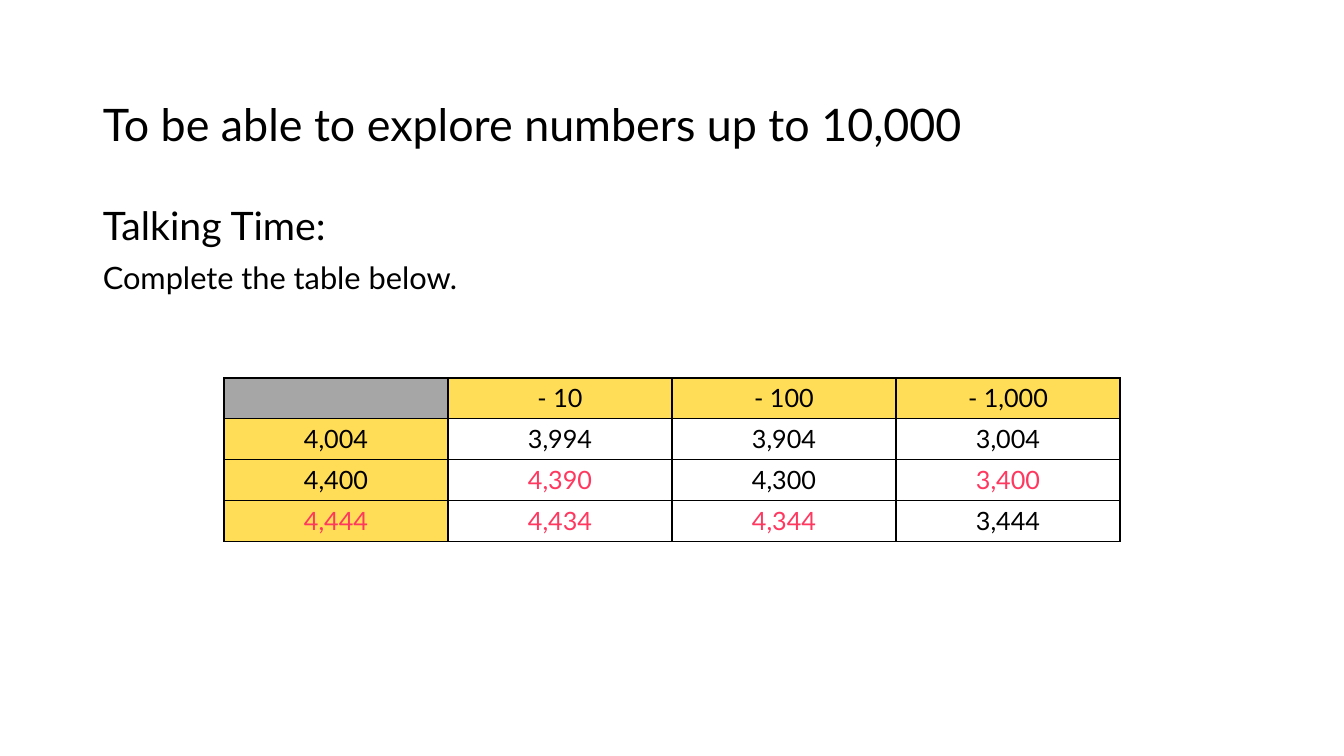
from dataclasses import dataclass

from lxml import etree
from pptx import Presentation
from pptx.dml.color import RGBColor
from pptx.enum.text import MSO_ANCHOR, MSO_AUTO_SIZE, PP_ALIGN
from pptx.oxml.ns import qn
from pptx.util import Inches, Pt

LEFT, CENTER = PP_ALIGN.LEFT, PP_ALIGN.CENTER
TOP, MIDDLE = MSO_ANCHOR.TOP, MSO_ANCHOR.MIDDLE
NO_FIT = MSO_AUTO_SIZE.NONE
WIDE, HIGH = Inches(13.33), Inches(7.5)


@dataclass(frozen=True)
class Theme:
    """Hold the font, type sizes and colours of the slide."""
    font: str = "Lato"
    title: int = 32
    head: int = 28
    body: int = 22
    cell: int = 18
    ink: str = "000000"
    answer: str = "FF3860"
    label: str = "FFDD57"
    blank: str = "A6A6A6"
    paper: str = "FFFFFF"


THEME = Theme()
ROWS = [
    ["", "- 10", "- 100", "- 1,000"],
    ["4,004", "3,994", "3,904", "3,004"],
    ["4,400", "4,390", "4,300", "3,400"],
    ["4,444", "4,434", "4,344", "3,444"],
]
ANSWERS = {"4,390", "3,400", "4,444", "4,434", "4,344"}


def style(para, size, color=THEME.ink, align=LEFT):
    """Set the alignment and font of a paragraph."""
    para.alignment = align
    para.font.name = THEME.font
    para.font.size = Pt(size)
    para.font.color.rgb = RGBColor.from_string(color)


def place(shape, left, top, width, height):
    """Place a shape by shares of the slide's size."""
    shape.left, shape.width = int(WIDE * left), int(WIDE * width)
    shape.top, shape.height = int(HIGH * top), int(HIGH * height)


def write(holder, lines, anchor):
    """Fill a placeholder with plain lines of given sizes."""
    frame = holder.text_frame
    frame.text = "\n".join(text for text, size in lines)
    frame.auto_size = NO_FIT
    frame.vertical_anchor = anchor
    for i, (para, (text, size)) in enumerate(zip(frame.paragraphs, lines)):
        props = para._p.get_or_add_pPr()
        props.set("marL", "0")
        props.set("indent", "0")
        etree.SubElement(props, qn("a:buNone"))
        para.line_spacing = 0.9
        para.space_before = Pt(10 if i else 0)
        style(para, size)


def border(cell):
    """Draw a thin line on each side of a cell."""
    props = cell._tc.get_or_add_tcPr()
    for i, side in enumerate(("lnL", "lnR", "lnT", "lnB")):
        line = etree.Element(qn(f"a:{side}"), w=str(Pt(1)))
        fill = etree.SubElement(line, qn("a:solidFill"))
        etree.SubElement(fill, qn("a:srgbClr"), val=THEME.ink)
        props.insert(i, line)


def shade(row, col):
    """Choose the fill of a cell from its place in the grid."""
    if row and col:
        return THEME.paper
    return THEME.label if row or col else THEME.blank


def add_grid(slide, rows, left, top, width, height):
    """Add a table with label cells and coloured answers."""
    frame = slide.shapes.add_table(
        len(rows), len(rows[0]), int(WIDE * left), int(HIGH * top),
        int(WIDE * width), int(HIGH * height))
    table = frame.table
    table.first_row = table.horz_banding = False
    for r, row in enumerate(rows):
        for c, text in enumerate(row):
            cell = table.cell(r, c)
            cell.text = text
            cell.fill.solid()
            cell.fill.fore_color.rgb = RGBColor.from_string(shade(r, c))
            color = THEME.answer if text in ANSWERS else THEME.ink
            style(cell.text_frame.paragraphs[0], THEME.cell, color, CENTER)
            border(cell)


def main():
    """Build the slide and save it."""
    deck = Presentation()
    deck.slide_width, deck.slide_height = WIDE, HIGH
    slide = deck.slides.add_slide(deck.slide_layouts[1])
    title, body = slide.placeholders
    place(title, 0.069, 0.072, 0.72, 0.193)
    write(title, [("To be able to explore numbers up to 10,000", THEME.title)],
          MIDDLE)
    place(body, 0.069, 0.267, 0.863, 0.635)
    write(body, [("Talking Time:", THEME.head),
                 ("Complete the table below.", THEME.body)], TOP)
    add_grid(slide, ROWS, 1 / 6, 0.5, 2 / 3, 0.216)
    deck.save("out.pptx")


if __name__ == "__main__":
    main()
